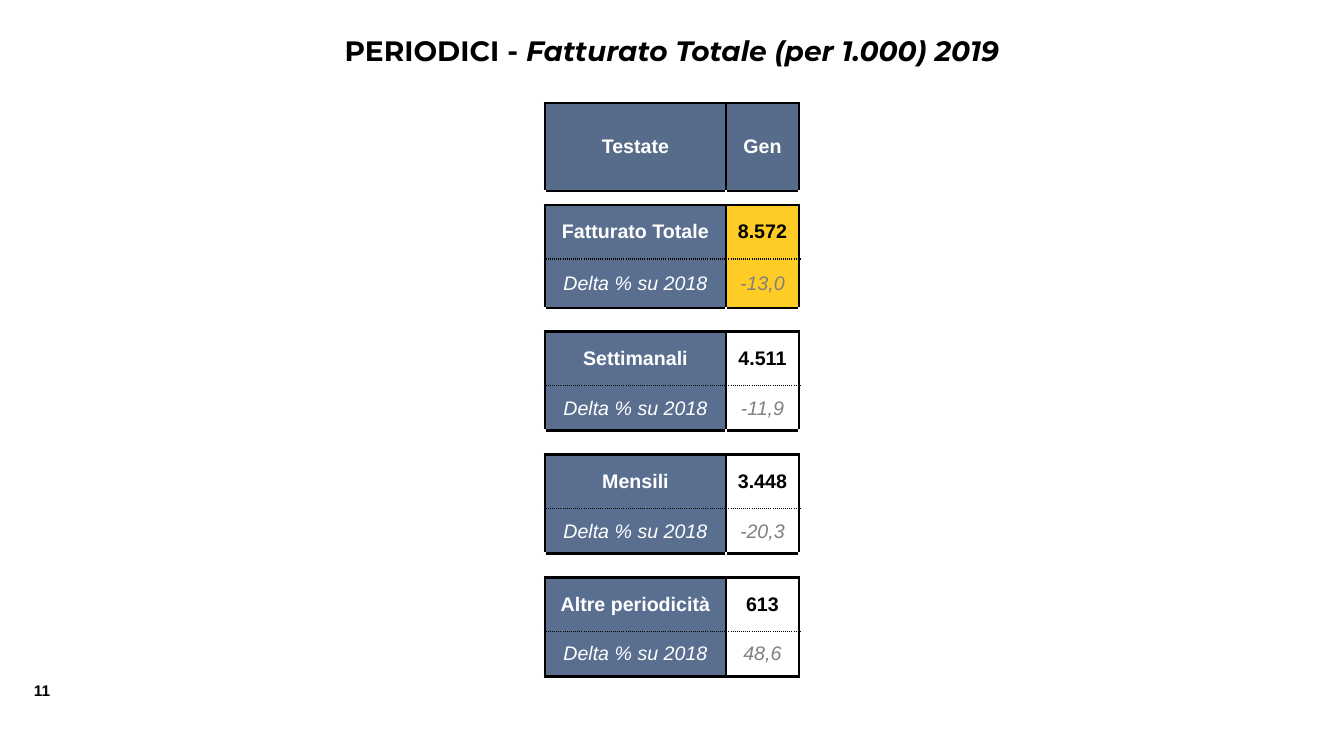
import dataclasses

import lxml.etree
import pptx
import pptx.dml.color
import pptx.enum.text
import pptx.oxml.ns
import pptx.util


@dataclasses.dataclass(frozen=True)
class Theme:
    black: str = "000000"
    white: str = "FFFFFF"
    grey: str = "808080"
    header: str = "576B8A"
    label: str = "5A6F90"
    total: str = "FFCB25"
    title_font: str = "Montserrat"
    body_font: str = "Arial"
    title_size: int = 20
    body_size: int = 14
    number_size: int = 11
    gap_size: int = 6


THEME = Theme()
SCALE = 914400 / 100.8
COLUMNS = [181, 73]
HEADER_HEIGHT = 88
VALUE_HEIGHT = 54
GROUPS = [
    ("Fatturato Totale", "8.572", "-13,0", THEME.total, 14, 49),
    ("Settimanali", "4.511", "-11,9", THEME.white, 24, 45),
    ("Mensili", "3.448", "-20,3", THEME.white, 24, 45),
    ("Altre periodicità", "613", "48,6", THEME.white, 24, 45),
]
SOLID = (THEME.black, 2.25, "solid")
DOTTED = (THEME.black, 1, "sysDot")
CLEAR = (THEME.white, 2.25, "solid")


def px(n):
    return pptx.util.Emu(round(n * SCALE))


def rgb(color):
    return pptx.dml.color.RGBColor.from_string(color)


def add_text(p, text, size=THEME.body_size, font=THEME.body_font,
             color=THEME.black, bold=False, italic=False, align="CENTER"):
    p.alignment = getattr(pptx.enum.text.PP_ALIGN, align)
    r = p.add_run()
    r.text = text
    r.font.size = pptx.util.Pt(size)
    r.font.name = font
    r.font.color.rgb = rgb(color)
    r.font.bold = bold
    r.font.italic = italic


def add_box(s, x, y, w, h, wrap):
    tf = s.shapes.add_textbox(px(x), px(y), px(w), px(h)).text_frame
    tf.word_wrap = wrap
    return tf.paragraphs[0]


def style_cell(cell, fill, left=SOLID, right=SOLID, top=SOLID, bottom=SOLID, inset=0):
    cell.vertical_anchor = pptx.enum.text.MSO_ANCHOR.MIDDLE
    cell.margin_left = cell.margin_right = px(inset)
    cell.margin_top = cell.margin_bottom = px(inset / 2)
    tc_pr = cell._tc.get_or_add_tcPr()
    qn = pptx.oxml.ns.qn
    for side, (color, width, dash) in zip("LRTB", (left, right, top, bottom)):
        ln = lxml.etree.SubElement(tc_pr, qn(f"a:ln{side}"), w=str(pptx.util.Pt(width)))
        line_fill = lxml.etree.SubElement(ln, qn("a:solidFill"))
        lxml.etree.SubElement(line_fill, qn("a:srgbClr"), val=color)
        lxml.etree.SubElement(ln, qn("a:prstDash"), val=dash)
    cell.fill.solid()
    cell.fill.fore_color.rgb = rgb(fill)


def fill_gap(cell):
    style_cell(cell, THEME.white, left=CLEAR, right=CLEAR)
    lxml.etree.SubElement(cell.text_frame.paragraphs[0]._p,
                          pptx.oxml.ns.qn("a:endParaRPr"), sz=str(THEME.gap_size * 100))


def fill_pair(cells, texts, fills, colors, bold, inset_value=0, **borders):
    for cell, text, fill, color, inset in zip(cells, texts, fills, colors, (10, inset_value)):
        style_cell(cell, fill, inset=inset, **borders)
        add_text(cell.text_frame.paragraphs[0], text, color=color, bold=bold, italic=not bold)


def add_title(s, x, y, w, h):
    p = add_box(s, x, y, w, h, True)
    for text, italic in (("PERIODICI - ", False), ("Fatturato Totale (per 1.000) 2019", True)):
        add_text(p, text, size=THEME.title_size, font=THEME.title_font, bold=True, italic=italic)


def add_page_number(s, x, y, w, h):
    add_text(add_box(s, x, y, w, h, False), "11", size=THEME.number_size,
             bold=True, align="LEFT")


def add_revenue_table(s, x, y):
    heights = [HEADER_HEIGHT]
    for *_, gap, delta_height in GROUPS:
        heights += [gap, VALUE_HEIGHT, delta_height]
    table = s.shapes.add_table(len(heights), len(COLUMNS), px(x), px(y),
                               px(sum(COLUMNS)), px(sum(heights))).table
    table.first_row = table.horz_banding = False
    for column, width in zip(table.columns, COLUMNS):
        column.width = px(width)
    for row, height in zip(table.rows, heights):
        row.height = px(height)

    rows = [list(row.cells) for row in table.rows]
    fill_pair(rows[0], ("Testate", "Gen"), (THEME.header, THEME.header),
              (THEME.white, THEME.white), True, inset_value=10)
    for i, (name, value, delta, fill, *_) in enumerate(GROUPS):
        gap, main, change = rows[1 + 3 * i:4 + 3 * i]
        for cell in gap:
            fill_gap(cell)
        fills = (THEME.label, fill)
        fill_pair(main, (name, value), fills, (THEME.white, THEME.black), True, bottom=DOTTED)
        fill_pair(change, ("Delta % su 2018", delta), fills,
                  (THEME.white, THEME.grey), False, top=DOTTED)


def main():
    prs = pptx.Presentation()
    prs.slide_width, prs.slide_height = px(1344), px(756)
    s = prs.slides.add_slide(prs.slide_layouts[6])
    add_page_number(s, 24, 676, 42, 29)
    add_title(s, 168, 29, 1008, 44)
    add_revenue_table(s, 545, 103)
    prs.save("out.pptx")


if __name__ == "__main__":
    main()
